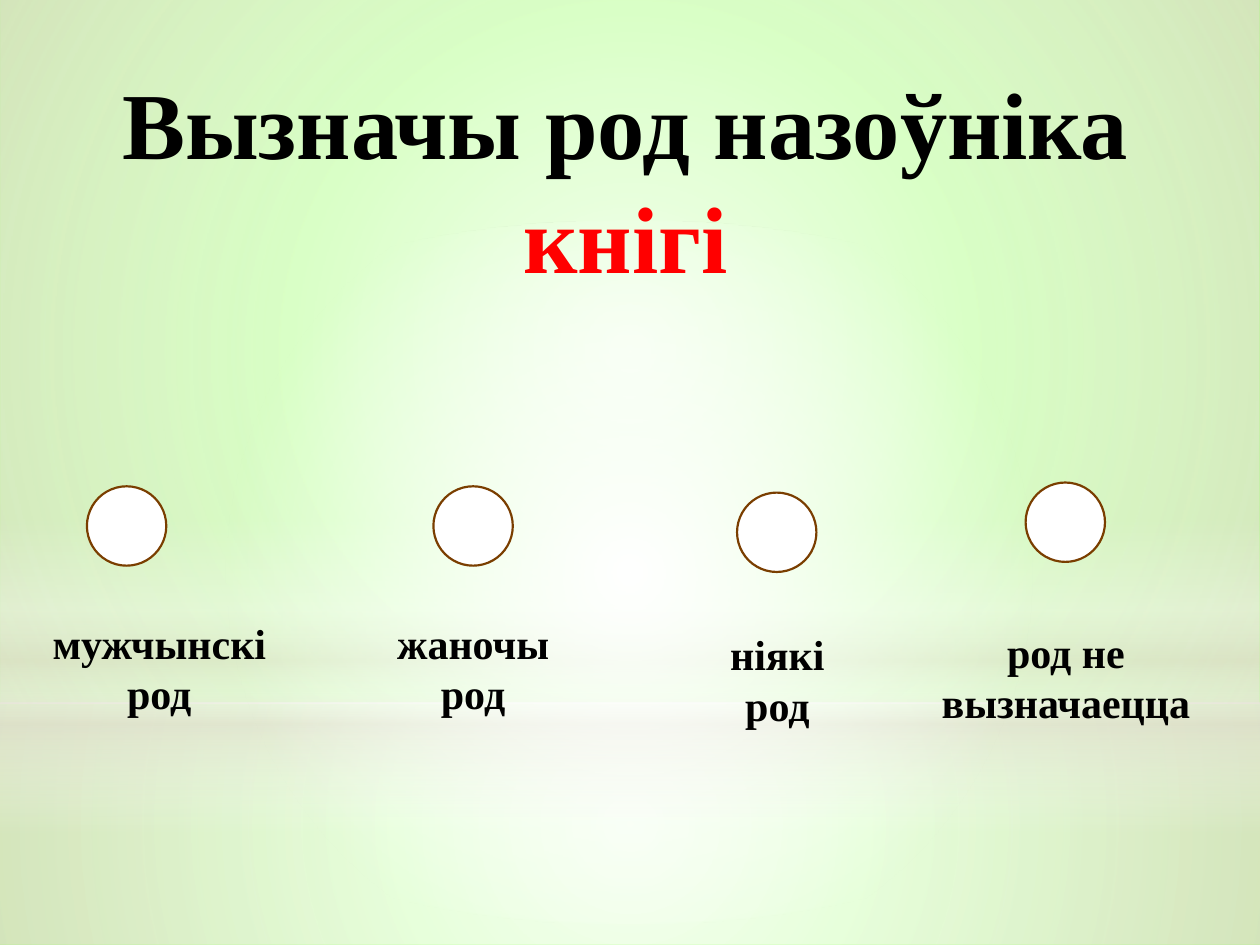
import pptx
from lxml import etree
from pptx.dml.color import RGBColor
from pptx.enum.shapes import MSO_SHAPE
from pptx.enum.text import MSO_ANCHOR, MSO_AUTO_SIZE, PP_ALIGN
from pptx.oxml.ns import qn
from pptx.util import Inches, Pt

SLIDE_WIDTH, SLIDE_HEIGHT = 10, 7.5
HORIZON = 5.58
FONT = "Times New Roman"
BLACK = RGBColor(0x00, 0x00, 0x00)
RED = RGBColor(0xFF, 0x00, 0x00)
WHITE = RGBColor(0xFF, 0xFF, 0xFF)
BROWN = RGBColor(0x7A, 0x3E, 0x00)
GREEN = RGBColor(0x99, 0xFF, 0x66)
SAND = RGBColor(0xE3, 0xDE, 0xD1)

CIRCLE_SIZE = 0.63
# label, label box (left, top, width, height), circle (left, top)
ANSWERS = [
    ("мужчынскі род", (0.28, 4.85, 1.97, 1.21), (0.69, 3.86)),
    ("жаночы род", (2.77, 4.85, 1.97, 1.21), (3.44, 3.86)),
    ("ніякі род", (5.42, 4.94, 1.5, 0.91), (5.85, 3.91)),
    ("род не вызначаецца", (7.26, 4.92, 2.4, 1.21), (8.14, 3.83)),
]


def add_plain_shape(slide, preset, box):
    shape = slide.shapes.add_shape(preset, *map(Inches, box))
    shape.shadow.inherit = False
    return shape


def add_glow(slide, preset, box, stops, angle=None):
    """Add a translucent gradient; stops are (position %, colour, opacity %).

    Without an angle the gradient spreads from the centre.
    """
    glow = add_plain_shape(slide, preset, box)
    glow.line.fill.background()
    glow.fill.gradient()
    gradient = glow.fill._xPr.find(qn("a:gradFill"))
    for child in list(gradient):
        gradient.remove(child)
    stop_list = etree.SubElement(gradient, qn("a:gsLst"))
    for position, colour, opacity in stops:
        stop = etree.SubElement(stop_list, qn("a:gs"), pos=str(position * 1000))
        tint = etree.SubElement(stop, qn("a:srgbClr"), val=str(colour))
        etree.SubElement(tint, qn("a:alpha"), val=str(opacity * 1000))
    if angle is None:
        spread = etree.SubElement(gradient, qn("a:path"), path="circle")
        sides = dict.fromkeys("ltrb", "50000")
        etree.SubElement(spread, qn("a:fillToRect"), **sides)
    else:
        etree.SubElement(gradient, qn("a:lin"), ang=str(angle * 60000), scaled="0")


def add_backdrop(slide):
    slide.background.fill.solid()
    slide.background.fill.fore_color.rgb = GREEN
    add_glow(slide, MSO_SHAPE.RECTANGLE,
             (0, HORIZON, SLIDE_WIDTH, SLIDE_HEIGHT - HORIZON),
             [(0, WHITE, 91), (37, WHITE, 76), (100, SAND, 79)])
    add_glow(slide, MSO_SHAPE.RECTANGLE, (0, 0, SLIDE_WIDTH, HORIZON),
             [(0, WHITE, 89), (48, WHITE, 62), (100, SAND, 79)])
    add_glow(slide, MSO_SHAPE.RECTANGLE, (0, 4.12, SLIDE_WIDTH, 2.5),
             [(0, WHITE, 0), (29, WHITE, 30), (45, SAND, 40),
              (55, WHITE, 26), (65, SAND, 60), (100, WHITE, 0)], angle=90)
    add_glow(slide, MSO_SHAPE.OVAL, (0, 1.75, SLIDE_WIDTH, HORIZON),
             [(0, WHITE, 100), (56, WHITE, 0)])


def add_centred_text(slide, box, size, lines):
    """Add bold centred text; lines are (wording, colour)."""
    frame = slide.shapes.add_textbox(*map(Inches, box)).text_frame
    frame.word_wrap = True
    frame.auto_size = MSO_AUTO_SIZE.SHAPE_TO_FIT_TEXT
    frame.vertical_anchor = MSO_ANCHOR.TOP
    frame.text = "\n".join(wording for wording, _ in lines)
    for paragraph, (_, colour) in zip(frame.paragraphs, lines):
        paragraph.alignment = PP_ALIGN.CENTER
        font = paragraph.runs[0].font
        font.name, font.size, font.bold = FONT, Pt(size), True
        font.color.rgb = colour


def add_answer_circle(slide, left, top):
    circle = add_plain_shape(slide, MSO_SHAPE.OVAL,
                             (left, top, CIRCLE_SIZE, CIRCLE_SIZE))
    circle.fill.solid()
    circle.fill.fore_color.rgb = WHITE
    circle.line.color.rgb = BROWN
    circle.line.width = Pt(1.25)


def main():
    deck = pptx.Presentation()
    deck.slide_width = Inches(SLIDE_WIDTH)
    deck.slide_height = Inches(SLIDE_HEIGHT)
    slide = deck.slides.add_slide(deck.slide_layouts[6])

    add_backdrop(slide)
    add_centred_text(slide, (0.28, 0.47, 9.37, 1.92), 54,
                     [("Вызначы род назоўніка", BLACK), ("кнігі", RED)])
    for label, label_box, circle_corner in ANSWERS:
        add_answer_circle(slide, *circle_corner)
        add_centred_text(slide, label_box, 24, [(label, BLACK)])

    deck.save("out.pptx")


if __name__ == "__main__":
    main()
